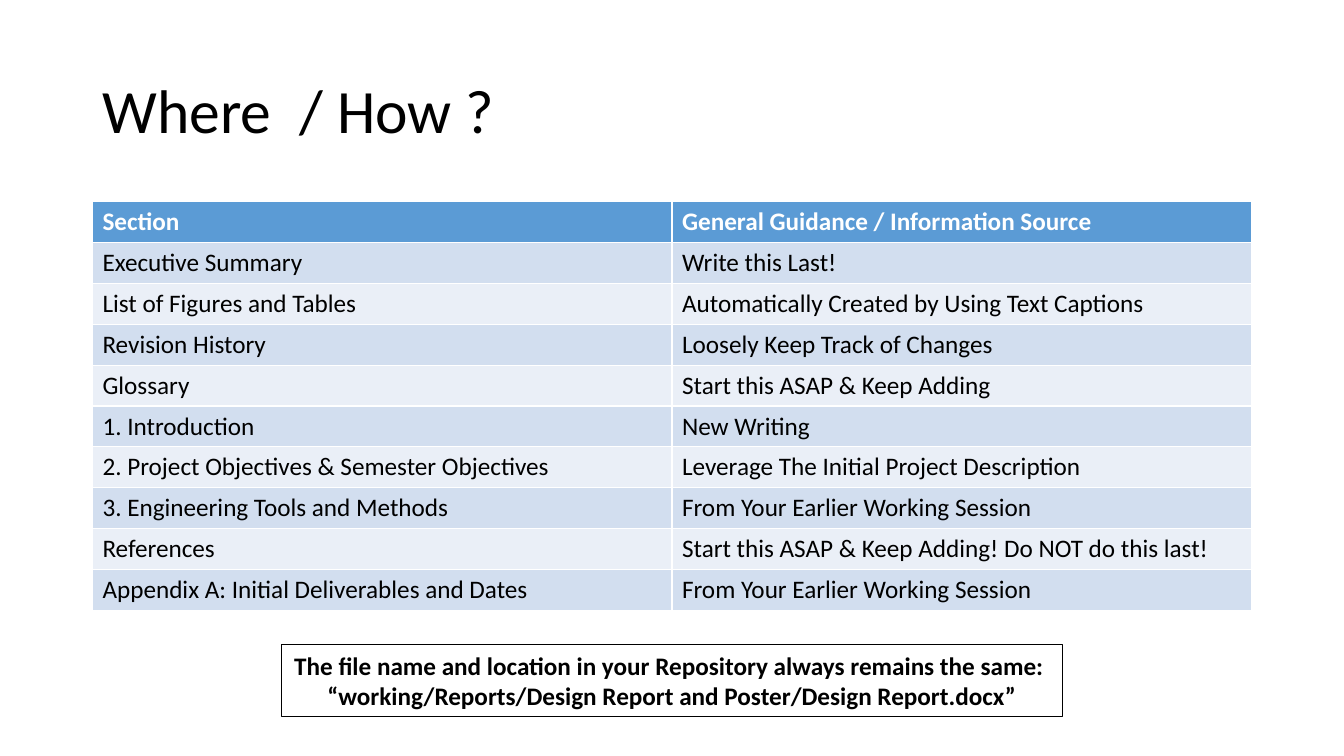
import pptx
import pptx.dml.color
import pptx.enum.shapes
import pptx.enum.text
import pptx.util
from pptx.util import Cm

COLORS = {
    "text": "000000",
    "header_text": "FFFFFF",
    "header": "5B9BD5",
    "band_dark": "D2DEEF",
    "band_light": "EAEFF7",
}
FONT = "Calibri"
MARGIN, CONTENT_W = Cm(2.33), Cm(29.21)
ROW_H = Cm(1.03)

TITLE = "Where  / How ?"
ROWS = [
    ("Section", "General Guidance / Information Source"),
    ("Executive Summary", "Write this Last!"),
    ("List of Figures and Tables", "Automatically Created by Using Text Captions"),
    ("Revision History", "Loosely Keep Track of Changes"),
    ("Glossary", "Start this ASAP & Keep Adding"),
    ("1. Introduction", "New Writing"),
    ("2. Project Objectives & Semester Objectives",
     "Leverage The Initial Project Description"),
    ("3. Engineering Tools and Methods", "From Your Earlier Working Session"),
    ("References", "Start this ASAP & Keep Adding! Do NOT do this last!"),
    ("Appendix A: Initial Deliverables and Dates",
     "From Your Earlier Working Session"),
]
FILE_NOTE = [
    "The file name and location in your Repository always remains the same: ",
    "“working/Reports/Design Report and Poster/Design Report.docx”",
]


def rgb(name):
    return pptx.dml.color.RGBColor.from_string(COLORS[name])


def set_attrs(obj, values):
    for name, value in values.items():
        setattr(obj, name, value)


def write(p, text, size=18, color="text", bold=False):
    r = p.add_run()
    r.text = text
    set_attrs(r.font, {"name": FONT, "size": pptx.util.Pt(size), "bold": bold})
    r.font.color.rgb = rgb(color)


def add_title(s):
    title = s.shapes.title
    set_attrs(title, {"left": MARGIN, "top": Cm(1.01),
                      "width": CONTENT_W, "height": Cm(3.68)})
    tf = title.text_frame
    tf.vertical_anchor = pptx.enum.text.MSO_ANCHOR.MIDDLE
    p = tf.paragraphs[0]
    set_attrs(p, {"alignment": pptx.enum.text.PP_ALIGN.LEFT, "line_spacing": 0.9})
    write(p, TITLE, size=44)


def add_guidance_table(s):
    table = s.shapes.add_table(len(ROWS), len(ROWS[0]), MARGIN, Cm(5.08),
                               CONTENT_W, ROW_H * len(ROWS)).table
    for i, texts in enumerate(ROWS):
        table.rows[i].height = ROW_H
        is_header = i == 0
        band = "band_dark" if i % 2 else "band_light"
        for j, text in enumerate(texts):
            cell = table.cell(i, j)
            cell.fill.solid()
            cell.fill.fore_color.rgb = rgb("header" if is_header else band)
            write(cell.text_frame.paragraphs[0], text, bold=is_header,
                  color="header_text" if is_header else "text")


def add_file_note(s):
    sp = s.shapes.add_shape(pptx.enum.shapes.MSO_SHAPE.RECTANGLE,
                            Cm(7.09), Cm(16.25), Cm(19.69), Cm(1.8))
    sp.shadow.inherit = False
    sp.fill.background()
    sp.line.color.rgb = rgb("text")
    sp.line.width = pptx.util.Pt(0.75)
    tf = sp.text_frame
    set_attrs(tf, {"word_wrap": True,
                   "vertical_anchor": pptx.enum.text.MSO_ANCHOR.TOP})
    for i, text in enumerate(FILE_NOTE):
        p = tf.add_paragraph() if i else tf.paragraphs[0]
        p.alignment = pptx.enum.text.PP_ALIGN.CENTER
        write(p, text, bold=True)


def main():
    prs = pptx.Presentation()
    set_attrs(prs, {"slide_width": Cm(33.87), "slide_height": Cm(19.05)})
    s = prs.slides.add_slide(prs.slide_layouts[5])
    add_title(s)
    add_guidance_table(s)
    add_file_note(s)
    prs.save("out.pptx")


if __name__ == "__main__":
    main()
